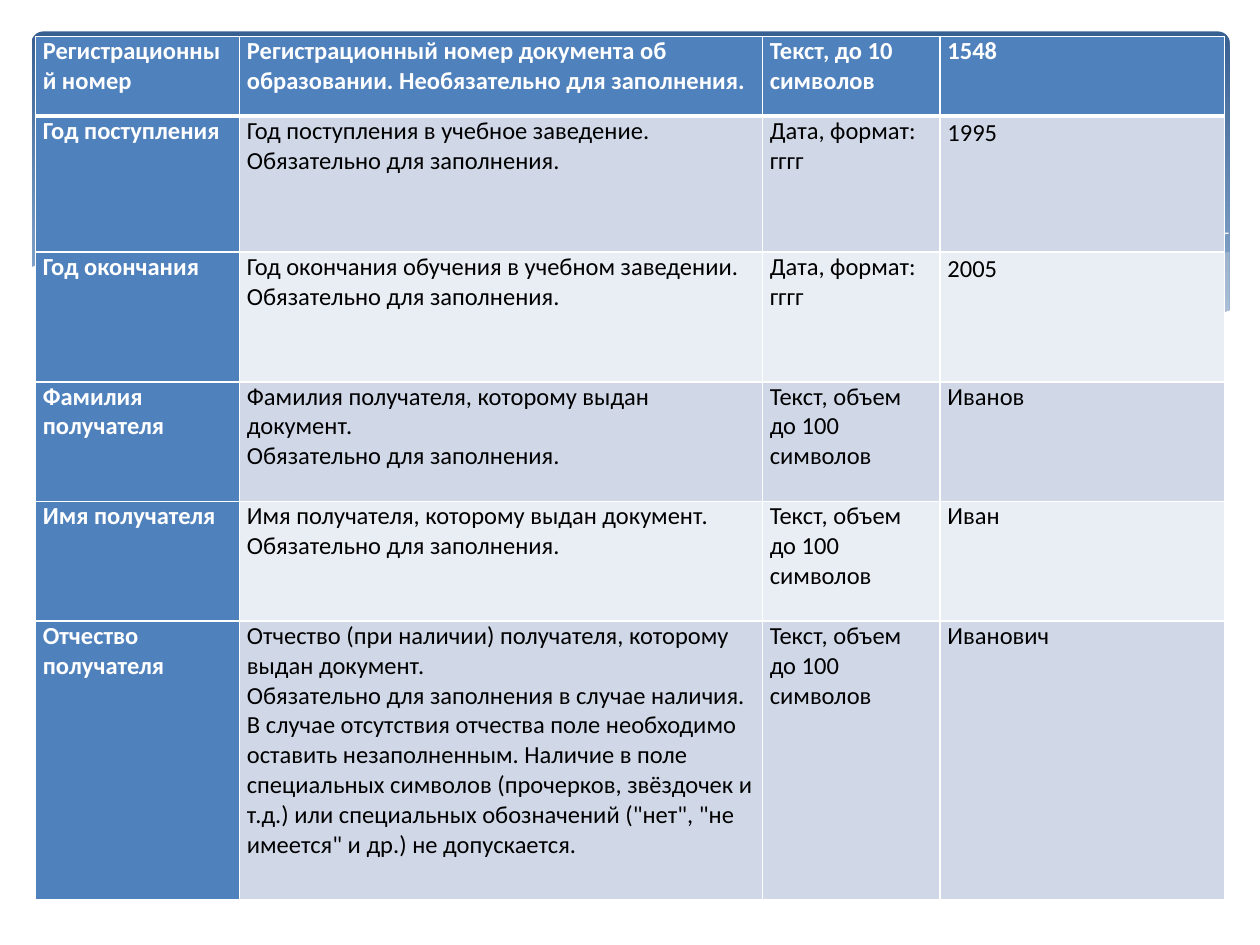
from lxml import etree
from pptx import Presentation, util as u
from pptx.dml.color import RGBColor
from pptx.enum import shapes
from pptx.oxml import ns

BLUE, WHITE, BLACK, CREAM = "4F81BD", "FFFFFF", "000000", "EEECE1"
BANDS = ("E9EDF4", "D0D8E8")
REQUIRED = "Обязательно для заполнения."
YEAR_FORMAT = "Дата, формат:\nгггг"
NAME_FORMAT = "Текст, объем до 100 символов"


def colour(value):
    return RGBColor.from_string(value)


def add_element(parent, tag, **attributes):
    return etree.SubElement(parent, ns.qn(tag), attributes)


class SlideBuilder:
    font = "Calibri"
    size = 14
    margin = 0.06

    def __init__(self, deck):
        self.slide = deck.slides.add_slide(deck.slide_layouts[6])

    def banner(self, left, top, width, height, stops):
        box = self.slide.shapes.add_shape(
            shapes.MSO_SHAPE.ROUNDED_RECTANGLE,
            *map(u.Inches, (left, top, width, height)))
        box.shadow.inherit = False
        box.adjustments[0] = 0.034
        box.line.fill.background()
        box.fill.gradient()
        box.fill.gradient_angle = 270
        for stop, (position, value) in zip(box.fill.gradient_stops, stops):
            stop.position = position
            stop.color.rgb = colour(value)

    def outline(self, points, closed):
        corners = [(u.Inches(x), u.Inches(y)) for x, y in points]
        builder = self.slide.shapes.build_freeform(*corners[0], scale=1.0)
        builder.add_line_segments(corners[1:], close=closed)
        shape = builder.convert_to_shape()
        shape.shadow.inherit = False
        return shape

    def wave(self, points, fill, opacity=100):
        shape = self.outline(points, True)
        shape.line.fill.background()
        shape.fill.solid()
        shape.fill.fore_color.rgb = colour(fill)
        if opacity < 100:
            target = shape.fill._xPr.find(".//" + ns.qn("a:srgbClr"))
            add_element(target, "a:alpha", val=str(opacity * 1000))

    def curve(self, points):
        shape = self.outline(points, False)
        shape.fill.background()
        shape.line.color.rgb = colour(WHITE)
        shape.line.width = u.Pt(0)

    def borders(self, cell, top, bottom):
        properties = cell._tc.get_or_add_tcPr()
        for side, width in (("L", 1), ("R", 1), ("T", top), ("B", bottom)):
            line = add_element(properties, f"a:ln{side}", w=str(u.Pt(width)))
            add_element(add_element(line, "a:solidFill"), "a:srgbClr", val=WHITE)

    def cell(self, cell, content, fill, heading, spaced):
        cell.fill.solid()
        cell.fill.fore_color.rgb = colour(fill)
        cell.margin_left = cell.margin_right = u.Inches(self.margin)
        cell.margin_top = cell.margin_bottom = 0
        frame = cell.text_frame
        for index, line in enumerate(content.split("\n")):
            para = frame.add_paragraph() if index else frame.paragraphs[0]
            if spaced:
                para.line_spacing = 1.07
                para.space_after = u.Pt(8)
            span = para.add_run()
            span.text = line
            span.font.name = self.font
            span.font.size = u.Pt(self.size)
            span.font.bold = heading
            span.font.color.rgb = colour(WHITE if heading else BLACK)

    def table(self, left, top, widths, heights, rows):
        table = self.slide.shapes.add_table(
            len(rows), len(widths), u.Inches(left), u.Inches(top),
            u.Inches(sum(widths)), u.Inches(sum(heights))).table
        for column, width in zip(table.columns, widths):
            column.width = u.Inches(width)
        for r, (height, row) in enumerate(zip(heights, rows)):
            table.rows[r].height = u.Inches(height)
            for c, content in enumerate(row):
                cell = table.cell(r, c)
                heading = r == 0 or c == 0
                self.borders(cell, 3 if r == 1 else 1, 3 if r == 0 else 1)
                self.cell(cell, content, BLUE if heading else BANDS[r % 2],
                          heading, c == 3 and r in (1, 2))


RIGHT_WAVE = [
    (9.75, 2), (9.48, 2.04), (9.21, 2.1), (8.61, 2.23), (8.05, 2.37),
    (7.53, 2.48), (7.06, 2.57), (6.61, 2.65), (7.05, 2.71), (7.45, 2.75),
    (8.03, 2.78), (8.54, 2.76), (8.97, 2.7), (9.35, 2.62), (9.63, 2.52),
    (9.76, 2.47), (9.76, 2)]
MIDDLE_WAVE = [
    (8.93, 2.73), (8.37, 2.65), (7.75, 2.54), (7.06, 2.4), (6.29, 2.22),
    (5.69, 2.08), (5.14, 1.98), (4.65, 1.91), (4.2, 1.87), (3.8, 1.85),
    (3.44, 1.86), (3.13, 1.88), (2.86, 1.91), (3.42, 1.99), (4.04, 2.11),
    (4.91, 2.32), (5.66, 2.48), (6.34, 2.61), (6.95, 2.7), (7.48, 2.76),
    (7.96, 2.78), (8.38, 2.78), (8.67, 2.76)]
LONG_CURVE = [
    (3.09, 1.95), (3.44, 1.9), (3.87, 1.87), (4.33, 1.87), (4.89, 1.9),
    (5.56, 1.97), (6.36, 2.08), (7.27, 2.26), (8.31, 2.51), (9.07, 2.72)]
SHORT_CURVE = [
    (6.13, 2.57), (6.72, 2.41), (7.48, 2.23), (8.36, 2.04), (8.95, 1.94),
    (9.38, 1.88), (9.75, 1.85)]
WHITE_WAVE = [
    (9.77, 2.46), (9.5, 2.56), (9.2, 2.65), (8.87, 2.71), (8.5, 2.75),
    (8.09, 2.77), (7.61, 2.75), (7.08, 2.7), (6.48, 2.62), (5.79, 2.5),
    (5.03, 2.33), (4.47, 2.2), (3.91, 2.07), (3.4, 1.97), (2.92, 1.9),
    (2.5, 1.86), (2.11, 1.84), (1.77, 1.84), (1.32, 1.86), (0.95, 1.91),
    (0.67, 1.97), (0.46, 2.03), (0.23, 2.13), (0.23, 3.29), (9.77, 3.29)]

ROWS = [
    ("Регистрационный номер",
     "Регистрационный номер документа об образовании. "
     "Необязательно для заполнения.",
     "Текст, до 10 символов", "1548"),
    ("Год поступления", f"Год поступления в учебное заведение.\n{REQUIRED}",
     YEAR_FORMAT, "1995"),
    ("Год окончания",
     f"Год окончания обучения в учебном заведении.\n{REQUIRED}",
     YEAR_FORMAT, "2005"),
    ("Фамилия получателя",
     f"Фамилия получателя, которому выдан документ.\n{REQUIRED}",
     NAME_FORMAT, "Иванов"),
    ("Имя получателя",
     f"Имя получателя, которому выдан документ.\n{REQUIRED}",
     NAME_FORMAT, "Иван"),
    ("Отчество получателя",
     "Отчество (при наличии) получателя, которому выдан документ.\n"
     "Обязательно для заполнения в случае наличия. В случае отсутствия "
     "отчества поле необходимо оставить незаполненным. Наличие в поле "
     "специальных символов (прочерков, звёздочек и т.д.) или специальных "
     'обозначений ("нет", "не имеется" и др.) не допускается.',
     NAME_FORMAT, "Иванович"),
]


def main():
    deck = Presentation()
    deck.slide_width, deck.slide_height = u.Inches(10), u.Inches(7.5)
    page = SlideBuilder(deck)
    page.banner(0.25, 0.25, 9.51, 2.7, [(0, "376092"), (0.9, "95B3D7")])
    page.wave(RIGHT_WAVE, CREAM, 29)
    page.wave(MIDDLE_WAVE, CREAM, 40)
    page.curve(LONG_CURVE)
    page.curve(SHORT_CURVE)
    page.wave(WHITE_WAVE, WHITE)
    page.table(0.28, 0.29, [1.62, 4.15, 1.41, 2.26],
               [0.63, 1.08, 1.03, 0.95, 0.95, 2.21], ROWS)
    deck.save("out.pptx")


if __name__ == "__main__":
    main()
